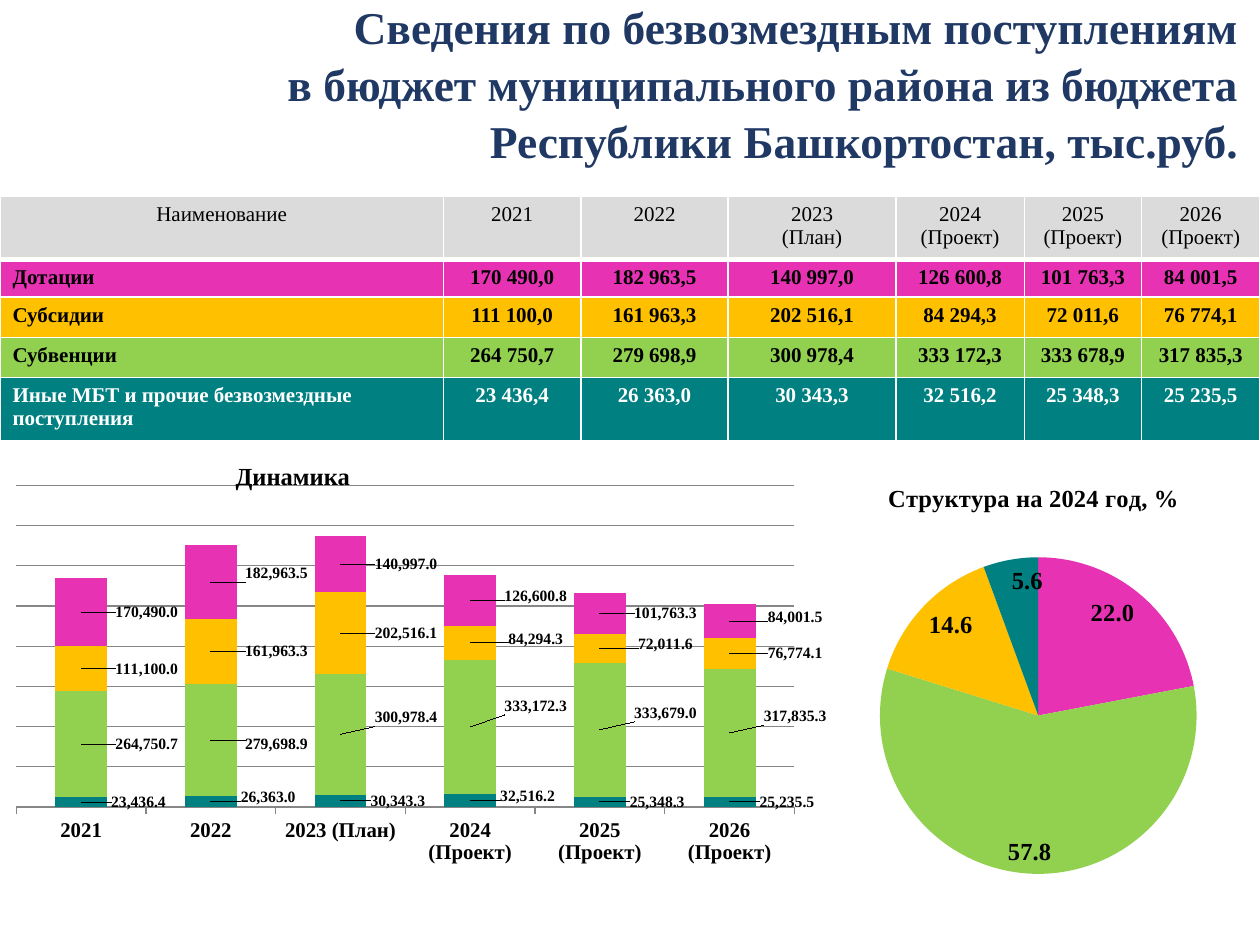
import dataclasses
import typing

import lxml.etree
import pptx
import pptx.chart.data
import pptx.dml.color
import pptx.enum.chart
import pptx.enum.text
import pptx.oxml.ns
import pptx.util

Cm = pptx.util.Cm
Pt = pptx.util.Pt
qn = pptx.oxml.ns.qn
ALIGN = pptx.enum.text.PP_ALIGN

PINK, AMBER, GREEN, TEAL = "E632B3", "FFC000", "92D050", "008080"
YEARS = ["2021", "2022", "2023 (План)", "2024 (Проект)", "2025 (Проект)", "2026 (Проект)"]
RECEIPTS = [
    ("Дотации", PINK, "000000", [170490, 182963.5, 140997, 126600.8, 101763.3, 84001.5]),
    ("Субсидии", AMBER, "000000", [111100, 161963.3, 202516.1, 84294.3, 72011.6, 76774.1]),
    ("Субвенции", GREEN, "000000", [264750.7, 279698.9, 300978.4, 333172.3, 333678.9, 317835.3]),
    ("Иные МБТ и прочие безвозмездные поступления", TEAL, "FFFFFF",
     [23436.4, 26363, 30343.3, 32516.2, 25348.3, 25235.5]),
]
CHART_SUBVENTIONS = [264750.7, 279698.9, 300978.4, 333172.3, 333679, 317835.3]
LABEL_SHIFTS = [
    (0.07, [0, -0.01, 0, -0.01, 0, 0]),
    (0.08, [0, 0.01, -0.04, -0.05, -0.04, -0.04]),
    (0.08, [0, 0, 0, -0.01, -0.01, 0]),
    (0.08, [0, -0.02, 0, -0.01, 0, -0.01]),
]


def color(value):
    return pptx.dml.color.RGBColor.from_string(value)


def amount(value):
    return f"{value:,.1f}".replace(",", " ").replace(".", ",")


def manual_layout(parent, index, **settings):
    for old in parent.findall(qn("c:layout")):
        parent.remove(old)
    layout = lxml.etree.Element(qn("c:layout"))
    manual = lxml.etree.SubElement(layout, qn("c:manualLayout"))
    for name, value in settings.items():
        lxml.etree.SubElement(manual, qn(f"c:{name}")).set("val", str(value))
    parent.insert(index, layout)


def place_plot(chart, x, y, w, h):
    plot_area = chart._chartSpace.chart.plotArea
    manual_layout(plot_area, 0, layoutTarget="inner", xMode="edge", yMode="edge", x=x, y=y, w=w, h=h)


@dataclasses.dataclass
class SlideBuilder:
    slide: typing.Any
    font_name: str = "Times New Roman"

    def style(self, font, size, bold=True, hex_color="000000"):
        font.name = self.font_name
        font.size = Pt(size)
        font.bold = bold
        font.color.rgb = color(hex_color)

    def text(self, left, top, width, height, text, size, hex_color="000000",
             align=ALIGN.LEFT, anchor=pptx.enum.text.MSO_ANCHOR.TOP, spacing=1.0):
        shape = self.slide.shapes.add_textbox(Cm(left), Cm(top), Cm(width), Cm(height))
        frame = shape.text_frame
        frame.word_wrap = True
        frame.vertical_anchor = anchor
        frame.text = text
        for paragraph in frame.paragraphs:
            paragraph.alignment = align
            paragraph.line_spacing = spacing
            for run in paragraph.runs:
                self.style(run.font, size, True, hex_color)

    def cell(self, cell, text, fill, align=ALIGN.CENTER, bold=True, hex_color="000000", bottom=1):
        cell.text_frame.text = text
        for paragraph in cell.text_frame.paragraphs:
            paragraph.alignment = align
            for run in paragraph.runs:
                self.style(run.font, 12, bold, hex_color)
        properties = cell._tc.get_or_add_tcPr()
        for side, width in (("L", 1), ("R", 1), ("T", 1), ("B", bottom)):
            border = lxml.etree.SubElement(properties, qn(f"a:ln{side}"), w=str(Pt(width)))
            solid = lxml.etree.SubElement(border, qn("a:solidFill"))
            lxml.etree.SubElement(solid, qn("a:srgbClr"), val="FFFFFF")
        cell.fill.solid()
        cell.fill.fore_color.rgb = color(fill)

    def table(self, left, top, widths, heights, headers, rows):
        table = self.slide.shapes.add_table(
            len(heights), len(widths), Cm(left), Cm(top), Cm(sum(widths)), Cm(sum(heights))).table
        table.horz_banding = False
        for column, width in zip(table.columns, widths):
            column.width = Cm(width)
        for row, height in zip(table.rows, heights):
            row.height = Cm(height)
        for index, header in enumerate(headers):
            self.cell(table.cell(0, index), header, "DBDBDB", bold=False, bottom=3)
        for row_index, (name, fill, hex_color, values) in enumerate(rows, 1):
            self.cell(table.cell(row_index, 0), name, fill, ALIGN.LEFT, hex_color=hex_color)
            for index, value in enumerate(values, 1):
                self.cell(table.cell(row_index, index), amount(value), fill, hex_color=hex_color)

    def chart(self, kind, left, top, width, height, categories, series, number_format):
        data = pptx.chart.data.CategoryChartData(number_format=number_format)
        data.categories = categories
        for name, values in series:
            data.add_series(name, values)
        chart = self.slide.shapes.add_chart(
            kind, Cm(left), Cm(top), Cm(width), Cm(height), data).chart
        chart.has_legend = False
        chart.has_title = False
        chart.font.name = "Calibri"
        chart.font.size = Pt(18)
        chart.font.color.rgb = color("000000")
        return chart

    def labels(self, series, size, number_format):
        labels = series.data_labels
        labels.show_value = True
        labels.number_format = number_format
        labels.number_format_is_linked = False
        self.style(labels.font, size)
        return labels

    def column_chart(self, left, top, width, height, categories, series, fills, shifts):
        chart = self.chart(pptx.enum.chart.XL_CHART_TYPE.COLUMN_STACKED,
                           left, top, width, height, categories, series, "#,##0.0")
        place_plot(chart, 0.02, 0.03, 0.95, 0.76)
        plot = chart.plots[0]
        plot.gap_width = 150
        plot.overlap = 100
        self.style(chart.category_axis.tick_labels.font, 12)
        chart.category_axis.format.line.color.rgb = color("868686")
        axis = chart.value_axis
        axis.visible = False
        axis.minimum_scale, axis.maximum_scale, axis.major_unit = 0, 800000, 100000
        axis.major_gridlines.format.line.color.rgb = color("868686")
        for bars, fill, (shift_x, shifts_y) in zip(plot.series, fills, shifts):
            bars.format.fill.solid()
            bars.format.fill.fore_color.rgb = color(fill)
            labels = self.labels(bars, 9, "#,##0.0")
            for index in range(len(categories)):
                self.style(bars.points[index].data_label.font, 9)
            for label, shift_y in zip(labels._element.findall(qn("c:dLbl")), shifts_y):
                manual_layout(label, 1, x=shift_x, y=shift_y)

    def pie_chart(self, left, top, width, height, title, values, fills):
        categories = [str(number) for number in range(1, len(values) + 1)]
        chart = self.chart(pptx.enum.chart.XL_CHART_TYPE.PIE, left, top, width, height,
                           categories, [("Структура", values)], "0.0")
        chart.has_title = True
        chart.chart_title.text_frame.text = title
        self.style(chart.chart_title.text_frame.paragraphs[0].runs[0].font, 14)
        place_plot(chart, 0.1, 0.21, 0.82, 0.7)
        series = chart.plots[0].series[0]
        for index, fill in enumerate(fills):
            point_fill = series.points[index].format.fill
            point_fill.solid()
            point_fill.fore_color.rgb = color(fill)
        labels = self.labels(series, 14, "0.0")
        labels.position = pptx.enum.chart.XL_LABEL_POSITION.INSIDE_END


def main():
    presentation = pptx.Presentation()
    presentation.slide_width, presentation.slide_height = Cm(25.4), Cm(19.05)
    builder = SlideBuilder(presentation.slides.add_slide(presentation.slide_layouts[6]))

    headers = ["Наименование"] + [year.replace(" (План)", "\n(План)") for year in YEARS]
    builder.table(0, 3.96, [8.94, 2.77, 2.97, 3.38, 2.59, 2.36, 2.39],
                  [1.27, 0.76, 0.81, 0.81, 1.27], headers, RECEIPTS)

    grants, subsidies, subventions, other = RECEIPTS
    stack = [other, (*subventions[:3], CHART_SUBVENTIONS), subsidies, grants]
    builder.column_chart(0, 9.53, 16.66, 8.53, YEARS, [(row[0], row[3]) for row in stack],
                         [row[1] for row in stack], LABEL_SHIFTS)
    builder.pie_chart(16.28, 9.32, 9.12, 9.12, "Структура на 2024 год, %",
                      [22, 57.8, 14.6, 5.6], [PINK, GREEN, AMBER, TEAL])
    builder.text(4.5, 9.17, 3.18, 0.86, "Динамика", 14)
    builder.text(3.66, 0.43, 21.56, 2.44,
                 "Сведения по безвозмездным поступлениям\n"
                 "в бюджет муниципального района из бюджета Республики Башкортостан, тыс.руб.",
                 26, "203864", ALIGN.RIGHT, pptx.enum.text.MSO_ANCHOR.MIDDLE, 1.05)
    presentation.save("out.pptx")


if __name__ == "__main__":
    main()
